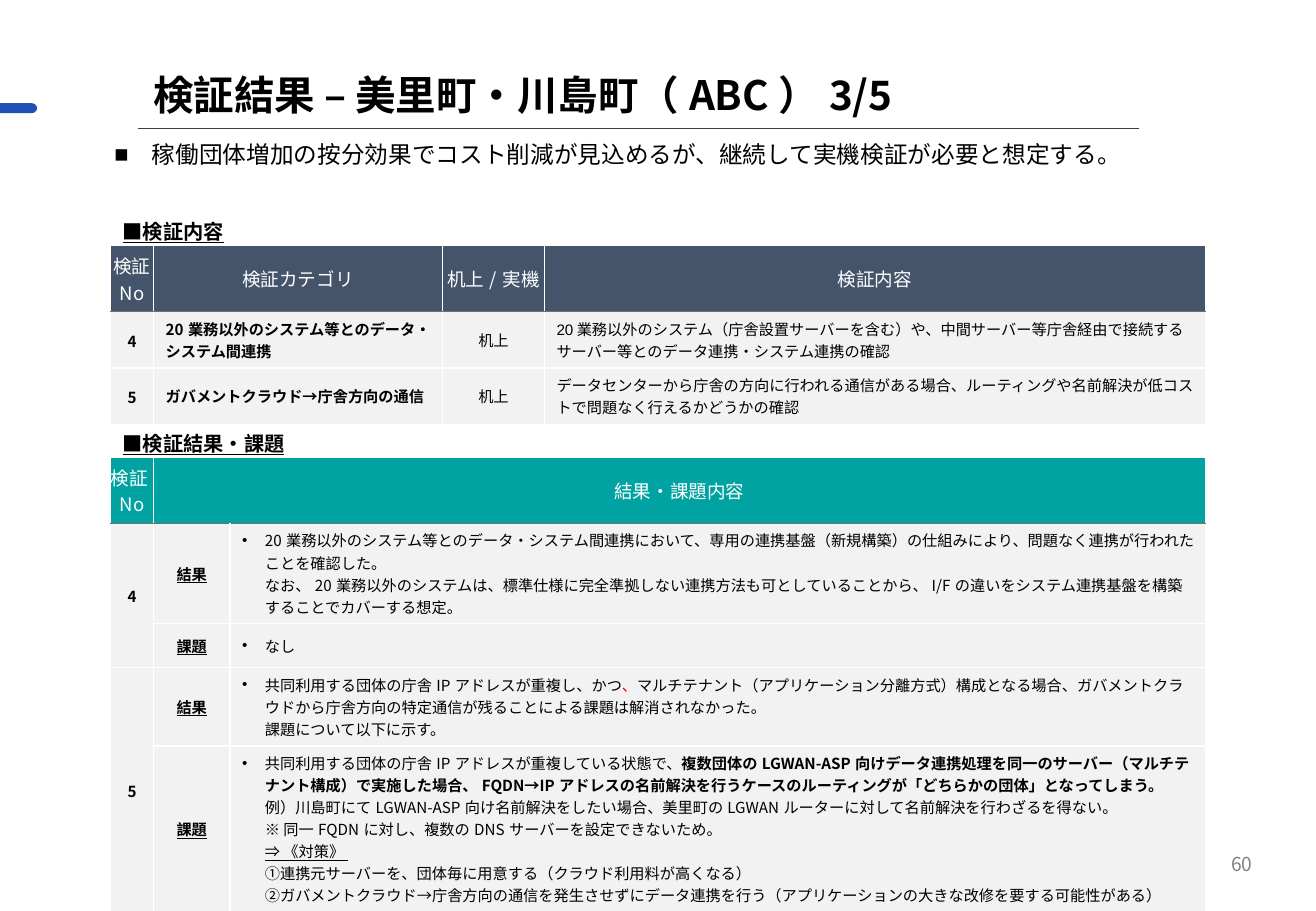
from copy import deepcopy

from lxml import etree
from pptx import Presentation
from pptx.dml.color import RGBColor
from pptx.enum.shapes import MSO_CONNECTOR, MSO_SHAPE
from pptx.enum.text import MSO_ANCHOR, MSO_AUTO_SIZE, PP_ALIGN
from pptx.oxml.ns import qn
from pptx.util import Pt

LEFT, CENTER, RIGHT = PP_ALIGN.LEFT, PP_ALIGN.CENTER, PP_ALIGN.RIGHT
TOP, MIDDLE = MSO_ANCHOR.TOP, MSO_ANCHOR.MIDDLE
FONT = "Noto Sans CJK JP"
BLACK, WHITE, RED = "000000", "FFFFFF", "FF0000"
NAVY, TEAL, PALE, RULE = "44546A", "00A3A1", "F2F2F2", "767171"
CAPTION_INSETS = (7.2, 0, 7.2, 0)
HEADER_INSETS = (0, 3.6, 0, 3.6)
NUMBER_INSETS = (0.7, 0.7, 0.7, 0)
CELL_INSETS = (7.2, 3.6, 7.2, 3.6)

CHECKS = [
    ("4", "20業務以外のシステム等とのデータ・システム間連携", "机上",
     [("20", {"font": "Arial"}),
      ("業務以外のシステム（庁舎設置サーバーを含む）や、中間サーバー等庁舎経由で接続する"
       "サーバー等とのデータ連携・システム連携の確認", {})]),
    ("5", "ガバメントクラウド→庁舎方向の通信", "机上",
     [("データセンターから庁舎の方向に行われる通信がある場合、ルーティングや名前解決が"
       "低コストで問題なく行えるかどうかの確認", {})]),
]

FINDINGS = [
    ("4", "結果", [
        ("20業務以外のシステム等とのデータ・システム間連携において、専用の連携基盤（新規構築）の"
         "仕組みにより、問題なく連携が行われたことを確認した。\n"
         "なお、20業務以外のシステムは、標準仕様に完全準拠しない連携方法も可としていることから、"
         "I/Fの違いをシステム連携基盤を構築することでカバーする想定。", {})]),
    ("4", "課題", [("なし", {})]),
    ("5", "結果", [
        ("共同利用する団体の庁舎IPアドレスが重複し、かつ", {}),
        ("、", {"color": RED}),
        ("マルチテナント（アプリケーション分離方式）構成となる場合、ガバメントクラウドから"
         "庁舎方向の特定通信が残ることによる課題は解消されなかった。\n"
         "課題について以下に示す。", {})]),
    ("5", "課題", [
        ("共同利用する団体の庁舎IPアドレスが重複している状態で、", {}),
        ("複数団体のLGWAN-ASP向けデータ連携処理を同一のサーバー（マルチテナント構成）で"
         "実施した場合、FQDN→IPアドレスの名前解決を行うケースのルーティングが"
         "「どちらかの団体」となってしまう。\n", {"bold": True}),
        ("例）川島町にてLGWAN-ASP向け名前解決をしたい場合、美里町のLGWANルーターに対して"
         "名前解決を行わざるを得ない。\n"
         "※ 同一FQDNに対し、複数のDNSサーバーを設定できないため。\n", {}),
        ("⇒ 《対策》 \n", {"underline": True}),
        ("①連携元サーバーを、団体毎に用意する（クラウド利用料が高くなる）\n"
         "②ガバメントクラウド→庁舎方向の通信を発生させずにデータ連携を行う"
         "（アプリケーションの大きな改修を要する可能性がある）", {})]),
]


def rgb(value):
    return RGBColor.from_string(value)


def add_span(para, text, size, color=BLACK, bold=False, underline=False, font=FONT):
    for index, line in enumerate(text.split("\n")):
        if index:
            para.add_line_break()
            para._p[-1].append(deepcopy(span._r.rPr))
        if not line:
            continue
        span = para.add_run()
        span.text = line
        span.font.size = Pt(size)
        span.font.bold = bold
        span.font.underline = underline
        span.font.color.rgb = rgb(color)
        span.font.name = font
        etree.SubElement(span._r.rPr, qn("a:ea"), typeface=FONT)


def add_bullet(para, mark, indent):
    props = para._p.get_or_add_pPr()
    props.set("marL", str(Pt(indent)))
    props.set("indent", str(-Pt(indent)))
    etree.SubElement(props, qn("a:buFont"), typeface="Arial")
    etree.SubElement(props, qn("a:buChar"), char=mark)


def set_frame(box, area, insets, anchor):
    box.left, box.top, box.width, box.height = (Pt(value) for value in area)
    frame = box.text_frame
    frame.word_wrap = True
    frame.auto_size = MSO_AUTO_SIZE.NONE
    frame.vertical_anchor = anchor
    (frame.margin_left, frame.margin_top,
     frame.margin_right, frame.margin_bottom) = (Pt(value) for value in insets)
    return frame.paragraphs[0]


def set_borders(cell, top, bottom):
    props = cell._tc.get_or_add_tcPr()
    sides = {"a:lnL": WHITE, "a:lnR": WHITE, "a:lnT": top, "a:lnB": bottom}
    for side, color in sides.items():
        line = etree.SubElement(props, qn(side), w=str(Pt(1)))
        fill = etree.SubElement(line, qn("a:solidFill"))
        etree.SubElement(fill, qn("a:srgbClr"), val=color)


def fill_cell(cell, paragraphs, size=9, fill=PALE, insets=CELL_INSETS, align=CENTER,
              anchor=MIDDLE, top=WHITE, bottom=WHITE, bullet=False, **style):
    (cell.margin_left, cell.margin_top,
     cell.margin_right, cell.margin_bottom) = (Pt(value) for value in insets)
    cell.vertical_anchor = anchor
    set_borders(cell, top, bottom)
    if fill:
        cell.fill.solid()
        cell.fill.fore_color.rgb = rgb(fill)
    else:
        cell.fill.background()
    for index, spans in enumerate(paragraphs):
        para = cell.text_frame.add_paragraph() if index else cell.text_frame.paragraphs[0]
        para.alignment = align
        if bullet:
            add_bullet(para, "•", 13.5)
        for text, changes in spans:
            add_span(para, text, size, **{**style, **changes})


def plain(*lines):
    return [[(line, {})] for line in lines]


def add_captioned_table(page, top, widths, heights, caption):
    frame = page.shapes.add_table(len(heights), len(widths), Pt(65.5), Pt(top),
                                  Pt(sum(widths)), Pt(sum(heights)))
    table = frame.table
    table.first_row = table.horz_banding = False
    for column, width in zip(table.columns, widths):
        column.width = Pt(width)
    for row, height in zip(table.rows, heights):
        row.height = Pt(height)
    table.cell(0, 0).merge(table.cell(0, len(widths) - 1))
    fill_cell(table.cell(0, 0), plain(caption), 12, None, CAPTION_INSETS, LEFT, TOP,
              bold=True, underline=True)
    return table


def fill_header(cell, fill, *lines):
    fill_cell(cell, plain(*lines), 11, fill, HEADER_INSETS, bottom=RULE, color=WHITE)


def add_checks_table(page):
    table = add_captioned_table(page, 128.2, [25.5, 171.3, 60.4, 391.8],
                                [13, 29.5, 20, 20], "■検証内容")
    headers = [("検証", "No"), ("検証カテゴリ",), ("机上/実機",), ("検証内容",)]
    for column, lines in enumerate(headers):
        fill_header(table.cell(1, column), NAVY, *lines)
    for row, (number, category, method, detail) in enumerate(CHECKS, 2):
        top = RULE if row == 2 else WHITE
        fill_cell(table.cell(row, 0), plain(number), insets=NUMBER_INSETS, top=top, bold=True)
        fill_cell(table.cell(row, 1), plain(category), align=LEFT, top=top, bold=True)
        fill_cell(table.cell(row, 2), plain(method), top=top)
        fill_cell(table.cell(row, 3), [detail], align=LEFT, top=top)


def add_findings_table(page):
    table = add_captioned_table(page, 253.6, [25.5, 45.3, 578.2],
                                [17, 22] + [26] * 4, "■検証結果・課題")
    table.cell(1, 1).merge(table.cell(1, 2))
    fill_header(table.cell(1, 0), TEAL, "検証No")
    fill_header(table.cell(1, 1), TEAL, "結果・課題内容")
    for row, (number, kind, detail) in enumerate(FINDINGS, 2):
        top = RULE if row == 2 else WHITE
        if row % 2 == 0:
            table.cell(row, 0).merge(table.cell(row + 1, 0))
            fill_cell(table.cell(row, 0), plain(number), insets=NUMBER_INSETS, top=top, bold=True)
        fill_cell(table.cell(row, 1), plain(kind), top=top, bold=True, underline=True)
        fill_cell(table.cell(row, 2), [detail], align=LEFT, top=top, bullet=True)


def add_accent_bar(page):
    bar = page.shapes.add_shape(MSO_SHAPE.ROUNDED_RECTANGLE, Pt(-6), Pt(61.2), Pt(28), Pt(5.8))
    bar.adjustments[0] = 0.5
    bar.shadow.inherit = False
    bar.fill.solid()
    bar.fill.fore_color.rgb = rgb("1E50B5")
    bar.line.fill.background()


def add_title_rule(page):
    rule = page.shapes.add_connector(MSO_CONNECTOR.STRAIGHT, Pt(82), Pt(76.2), Pt(675), Pt(76.2))
    rule.line.color.rgb = rgb("333F50")
    rule.line.width = Pt(0.5)
    etree.SubElement(rule._element.spPr, qn("a:effectLst"))


def add_heading(page):
    para = set_frame(page.shapes.title, (90.7, 39.6, 613.4, 32.4), (0, 0, 0, 0), MIDDLE)
    para.alignment = LEFT
    add_span(para, "検証結果 – 美里町・川島町（ABC）3/5", 24, bold=True)


def add_message(page):
    para = set_frame(page.placeholders[1], (63.4, 78.5, 671, 39.6), [4.3] * 4, TOP)
    para.space_before = Pt(0)
    para.space_after = Pt(6)
    add_bullet(para, "■", 22.3)
    add_span(para, "稼働団体増加の按分効果でコスト削減が見込めるが、継続して実機検証が必要と想定する。", 14)


def add_page_number(page):
    box = page.shapes.add_textbox(0, 0, 0, 0)
    para = set_frame(box, (573.8, 497.5, 175.7, 28.8), CELL_INSETS, MIDDLE)
    para.alignment = RIGHT
    add_span(para, "60", 11.4, color="808080")


def main():
    deck = Presentation()
    deck.slide_width, deck.slide_height = Pt(780), Pt(540)
    page = deck.slides.add_slide(deck.slide_layouts[1])
    add_accent_bar(page)
    add_checks_table(page)
    add_findings_table(page)
    add_heading(page)
    add_title_rule(page)
    add_message(page)
    add_page_number(page)
    deck.save("out.pptx")


if __name__ == "__main__":
    main()
